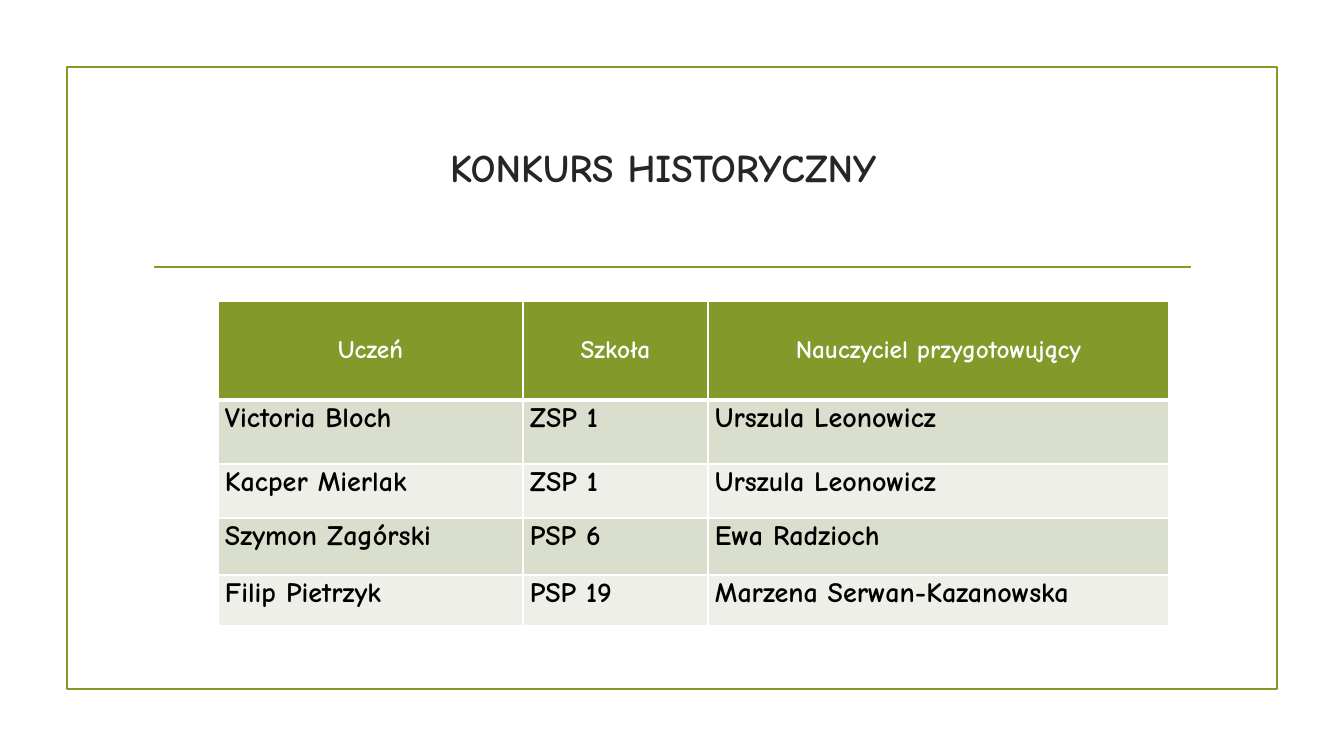
from lxml.etree import SubElement
from pptx import Presentation
from pptx.dml.color import RGBColor
from pptx.enum.shapes import MSO_CONNECTOR, MSO_SHAPE
from pptx.enum.text import MSO_ANCHOR, PP_ALIGN
from pptx.oxml.ns import qn
from pptx.util import Emu, Pt

EMU_PER_PX = 914400 / 100.8
FONT = "Comic Neue"
GREEN = RGBColor(0x83, 0x99, 0x2A)
DARK = RGBColor(0x26, 0x26, 0x26)
BLACK = RGBColor(0, 0, 0)
WHITE = RGBColor(0xFF, 0xFF, 0xFF)
BAND_DARK = RGBColor(0xD9, 0xDE, 0xCD)
BAND_LIGHT = RGBColor(0xED, 0xEF, 0xE8)

COLUMN_WIDTHS = [305, 185, 461]
ROW_HEIGHTS = [99, 64, 54, 57, 51]
HEADERS = ["Uczeń", "Szkoła", "Nauczyciel przygotowujący"]
RESULTS = [
    ["Victoria Bloch", "ZSP 1", "Urszula Leonowicz"],
    ["Kacper Mierlak", "ZSP 1", "Urszula Leonowicz"],
    ["Szymon Zagórski", "PSP 6", "Ewa Radzioch"],
    ["Filip Pietrzyk", "PSP 19", "Marzena Serwan-Kazanowska"],
]


def px(length):
    return Emu(round(length * EMU_PER_PX))


def add_span(para, text, size, color):
    span = para.add_run()
    span.text = text
    span.font.name = FONT
    span.font.size = Pt(size)
    span.font.bold = True
    span.font.color.rgb = color


def add_frame(page, left, top, width, height):
    frame = page.shapes.add_shape(
        MSO_SHAPE.RECTANGLE, px(left), px(top), px(width), px(height)
    )
    frame.shadow.inherit = False
    frame.fill.background()
    frame.line.color.rgb = GREEN
    frame.line.width = Pt(1.25)


def add_rule(page, left, right, y):
    rule = page.shapes.add_connector(
        MSO_CONNECTOR.STRAIGHT, px(left), px(y), px(right), px(y)
    )
    rule.line.color.rgb = GREEN
    rule.line.width = Pt(1.25)
    SubElement(rule._element.spPr, qn("a:effectLst"))


def add_title(page, text, left, top, width, height):
    box = page.shapes.add_textbox(px(left), px(top), px(width), px(height))
    box.text_frame.word_wrap = True
    box.text_frame.vertical_anchor = MSO_ANCHOR.MIDDLE
    para = box.text_frame.paragraphs[0]
    para.alignment = PP_ALIGN.CENTER
    add_span(para, text, 28, DARK)


def set_borders(cell, top, bottom):
    properties = cell._tc.get_or_add_tcPr()
    for side, points in (("L", 1), ("R", 1), ("T", top), ("B", bottom)):
        border = SubElement(properties, qn(f"a:ln{side}"), w=str(Pt(points)))
        fill = SubElement(border, qn("a:solidFill"))
        SubElement(fill, qn("a:srgbClr"), val=str(WHITE))


def fill_cell(cell, color):
    cell.fill.solid()
    cell.fill.fore_color.rgb = color


def write_header(cell, text):
    set_borders(cell, 1, 3)
    fill_cell(cell, GREEN)
    cell.vertical_anchor = MSO_ANCHOR.MIDDLE
    cell.margin_left = cell.margin_right = px(8)
    cell.margin_top = cell.margin_bottom = px(5)
    para = cell.text_frame.paragraphs[0]
    para.alignment = PP_ALIGN.CENTER
    add_span(para, text, 18, WHITE)


def write_result(cell, text, row):
    set_borders(cell, 3 if row == 1 else 1, 1)
    fill_cell(cell, BAND_DARK if row % 2 else BAND_LIGHT)
    cell.vertical_anchor = MSO_ANCHOR.TOP
    cell.margin_left = cell.margin_right = px(7)
    cell.margin_top = cell.margin_bottom = 0
    para = cell.text_frame.paragraphs[0]
    para.line_spacing = 1.07
    add_span(para, text, 20, BLACK)


def add_results_table(page, left, top):
    table = page.shapes.add_table(
        len(ROW_HEIGHTS), len(COLUMN_WIDTHS), px(left), px(top),
        px(sum(COLUMN_WIDTHS)), px(sum(ROW_HEIGHTS)),
    ).table
    for column, width in zip(table.columns, COLUMN_WIDTHS):
        column.width = px(width)
    for row, height in zip(table.rows, ROW_HEIGHTS):
        row.height = px(height)
    for column, text in enumerate(HEADERS):
        write_header(table.cell(0, column), text)
    for row, result in enumerate(RESULTS, 1):
        for column, text in enumerate(result):
            write_result(table.cell(row, column), text, row)


def main():
    deck = Presentation()
    deck.slide_width = px(1344)
    deck.slide_height = px(756)
    page = deck.slides.add_slide(deck.slide_layouts[6])
    add_frame(page, 67, 67, 1210, 622)
    add_rule(page, 154, 1191, 267)
    add_title(page, "KONKURS HISTORYCZNY", 114, 96, 1098, 141)
    add_results_table(page, 218, 301)
    deck.save("out.pptx")


if __name__ == "__main__":
    main()
